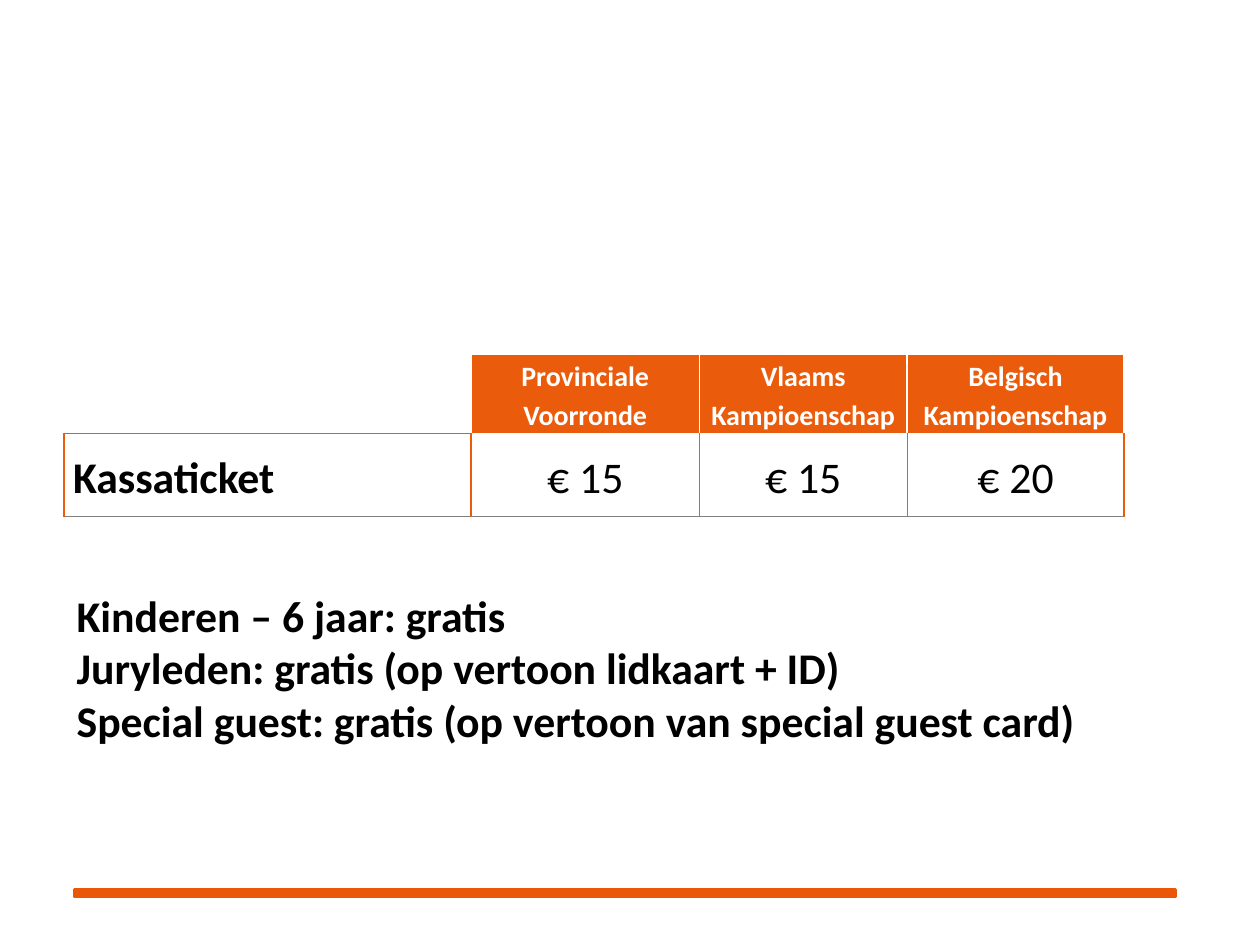
from lxml.etree import SubElement
from pptx import Presentation
from pptx.dml.color import RGBColor
from pptx.enum.shapes import MSO_SHAPE
from pptx.enum.text import MSO_ANCHOR, MSO_AUTO_SIZE, PP_ALIGN
from pptx.oxml.ns import qn
from pptx.util import Inches, Pt

ORANGE = RGBColor(0xEA, 0x5B, 0x0B)
BAR = RGBColor(0xEA, 0x58, 0x07)
WHITE = RGBColor(0xFF, 0xFF, 0xFF)
BLACK = RGBColor(0, 0, 0)
GREY = RGBColor(0x7F, 0x7F, 0x7F)

HEAD = {"name": "Calibri", "size": Pt(16), "bold": True}
LABEL = {"name": "Calibri", "size": Pt(25), "bold": True}
PRICE = {"name": "Calibri", "size": Pt(25), "bold": False}


def style(font, form, color):
    for key, val in form.items():
        setattr(font, key, val)
    font.color.rgb = color


def edge(cell, side, color, width):
    line = SubElement(cell._tc.get_or_add_tcPr(), qn("a:ln" + side), w=str(Pt(width)))
    if color is None:
        SubElement(line, qn("a:noFill"))
    else:
        fill = SubElement(line, qn("a:solidFill"))
        SubElement(fill, qn("a:srgbClr"), val=str(color))


prs = Presentation()
prs.slide_width, prs.slide_height = Inches(10), Inches(7.5)
slide = prs.slides.add_slide(prs.slide_layouts[6])

# Bar at the foot
bar = slide.shapes.add_shape(
    MSO_SHAPE.RECTANGLE, Inches(0.59), Inches(7.06), Inches(8.74), Inches(0.05))
bar.shadow.inherit = False
bar.fill.solid()
bar.fill.fore_color.rgb = BAR
bar.line.color.rgb = BAR
bar.line.width = Pt(2)

# Price table
rows = [
    ["", "Provinciale Voorronde", "Vlaams Kampioenschap", "Belgisch\nKampioenschap"],
    ["Kassaticket", "€ 15", "€ 15", "€ 20"],
]
table = slide.shapes.add_table(
    2, 4, Inches(0.51), Inches(2.81), Inches(8.41), Inches(1.29)).table
table.first_row = table.horz_banding = False
for col, width in zip(table.columns, [3.23, 1.81, 1.65, 1.72]):
    col.width = Inches(width)
for row, height in zip(table.rows, [0.63, 0.66]):
    row.height = Inches(height)

for r, row in enumerate(rows):
    for c, text in enumerate(row):
        cell = table.cell(r, c)
        # Borders: left, right, top, bottom
        if r == 0 and c == 0:
            lines = [(None, 1), (None, 1), (None, 1), (ORANGE, 1)]
        elif r == 0:
            lines = [(WHITE, 1)] * 4
        else:
            left = (ORANGE, 1) if c < 2 else (GREY, 0.5)
            right = (ORANGE, 1) if c in (0, 3) else (GREY, 0.5)
            top = (ORANGE, 1) if c == 0 else (WHITE, 1)
            lines = [left, right, top, (GREY, 0.5)]
        for side, (color, width) in zip("LRTB", lines):
            edge(cell, side, color, width)

        if r == 0 and c > 0:
            cell.fill.solid()
            cell.fill.fore_color.rgb = ORANGE
        else:
            cell.fill.background()
        cell.margin_left = cell.margin_right = Inches(0.07)
        cell.margin_top = cell.margin_bottom = 0
        cell.vertical_anchor = MSO_ANCHOR.MIDDLE

        cell.text = text
        form = HEAD if r == 0 else LABEL if c == 0 else PRICE
        for para in cell.text_frame.paragraphs:
            para.alignment = PP_ALIGN.CENTER if c else PP_ALIGN.LEFT
            para.line_spacing = 1.15
            style(para.font, form, BLACK if r else WHITE)
            for run in para.runs:
                style(run.font, form, BLACK if r else WHITE)

# Free entry
notes = [
    "Kinderen – 6 jaar: gratis",
    "Juryleden: gratis (op vertoon lidkaart + ID)",
    "Special guest: gratis (op vertoon van special guest card)",
]
box = slide.shapes.add_textbox(Inches(0.51), Inches(4.62), Inches(8.41), Inches(1.36))
frame = box.text_frame
frame.word_wrap = True
frame.auto_size = MSO_AUTO_SIZE.SHAPE_TO_FIT_TEXT
para = frame.paragraphs[0]
for i, text in enumerate(notes):
    if i:
        para.add_line_break()
    run = para.add_run()
    run.text = text
    style(run.font, LABEL, BLACK)

prs.save("out.pptx")
